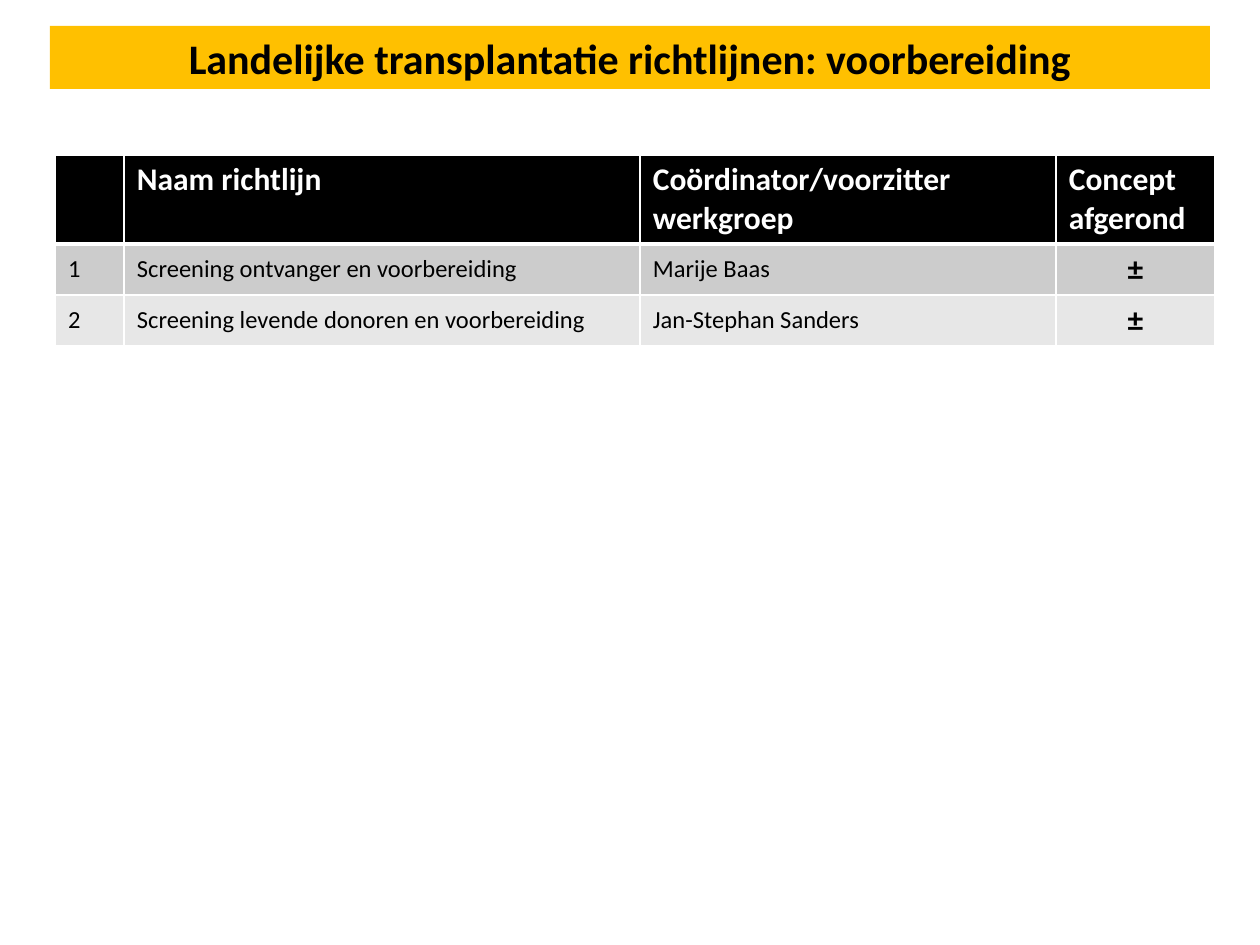
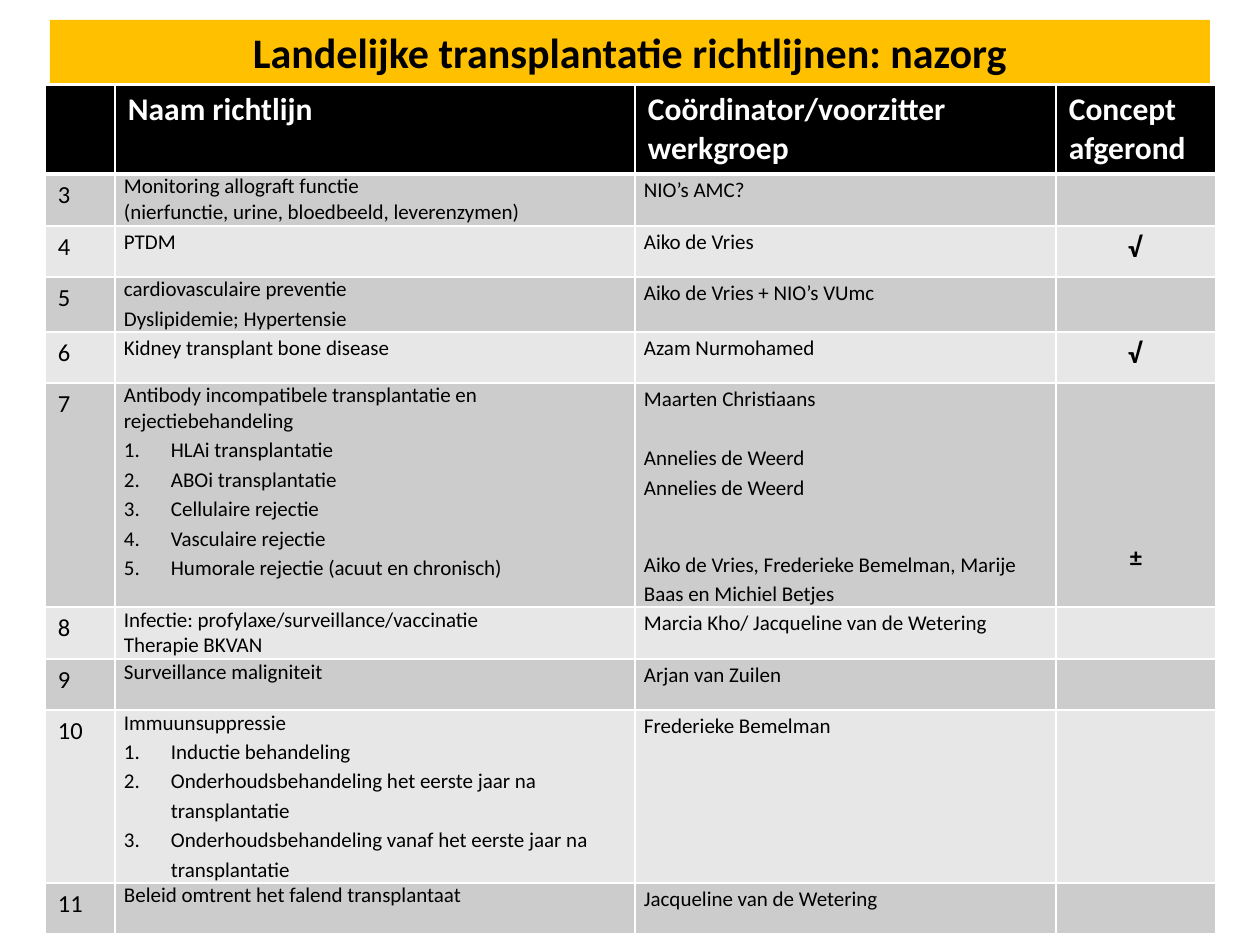
"""Builds two slides that list the national transplant guidelines."""
from dataclasses import dataclass

from lxml import etree
from pptx import Presentation
from pptx.dml.color import RGBColor
from pptx.enum.shapes import MSO_SHAPE
from pptx.enum.text import MSO_ANCHOR, PP_ALIGN
from pptx.oxml.ns import qn
from pptx.util import Emu, Pt

RECTANGLE = MSO_SHAPE.RECTANGLE
TOP, MIDDLE = MSO_ANCHOR.TOP, MSO_ANCHOR.MIDDLE
LEFT, CENTER = PP_ALIGN.LEFT, PP_ALIGN.CENTER
EMU_PER_PX = 914400 / 126
HEADINGS = ("", "Naam richtlijn", "Coördinator/voorzitter werkgroep", "Concept afgerond")


@dataclass(frozen=True)
class Theme:
    """Colours, font and type sizes shared by the slides."""
    font: str = "Calibri"
    band: str = "FFC000"
    ink: str = "000000"
    paper: str = "FFFFFF"
    stripes: tuple = ("CCCCCC", "E7E7E7")
    title: int = 24
    heading: int = 18
    check: int = 16
    body: int = 14
    detail: int = 12
    rule: int = 1
    header_rule: int = 3


THEME = Theme()


@dataclass(frozen=True)
class Line:
    """One paragraph of a table cell."""
    text: str
    size: int = THEME.detail
    bold: bool = False
    align: int = LEFT
    spacing: float = 1.15
    before: int = 0
    indent: int = 0
    numbered: bool = False


@dataclass(frozen=True)
class Entry:
    """The paragraphs of a table cell with their placement."""
    lines: tuple = ()
    anchor: int = TOP
    side: int = 13
    top: int = 6
    bottom: int = 6


def px(length):
    """Turn px into EMU."""
    return Emu(round(length * EMU_PER_PX))


def label(text, size=THEME.body, bold=False, align=LEFT, anchor=TOP, top=6):
    """Make a single-line entry with normal margins."""
    return Entry((Line(text, size, bold, align, 1.0),), anchor, top=top)


def detail(*lines):
    """Make an entry with tight margins; plain strings become 12 pt lines."""
    return Entry(tuple(Line(line) if isinstance(line, str) else line for line in lines),
                 side=9, top=0, bottom=0)


def dense(text):
    """Make a line without extra leading."""
    return Line(text, spacing=1.0)


def steps(*texts):
    """Make the numbered lines of a guideline."""
    return tuple(Line(text, indent=47, numbered=True) for text in texts)


def style_run(run, size, bold, color):
    """Set the font of a run."""
    run.font.name = THEME.font
    run.font.size = Pt(size)
    run.font.bold = bold
    run.font.color.rgb = RGBColor.from_string(color)


def write_line(paragraph, line, color):
    """Write and format one paragraph."""
    paragraph.text = line.text
    paragraph.alignment = line.align
    paragraph.line_spacing = line.spacing
    paragraph.space_before = Pt(line.before)
    for run in paragraph.runs:
        style_run(run, line.size, line.bold, color)
    properties = paragraph._p.get_or_add_pPr()
    if line.indent:
        properties.set("marL", str(px(line.indent)))
    if line.numbered:
        properties.set("indent", str(-px(line.indent)))
        etree.SubElement(properties, qn("a:buAutoNum"), type="arabicPeriod")


def draw_borders(cell, top, bottom):
    """Draw the four borders of a cell, with widths in points."""
    properties = cell._tc.get_or_add_tcPr()
    widths = {"L": THEME.rule, "R": THEME.rule, "T": top, "B": bottom}
    for side, width in widths.items():
        border = etree.SubElement(properties, qn(f"a:ln{side}"), w=str(Pt(width)))
        fill = etree.SubElement(border, qn("a:solidFill"))
        etree.SubElement(fill, qn("a:srgbClr"), val=THEME.paper)


def fill_cell(cell, entry, fill, color):
    """Fill a cell and write its entry."""
    cell.fill.solid()
    cell.fill.fore_color.rgb = RGBColor.from_string(fill)
    cell.vertical_anchor = entry.anchor
    cell.margin_left = cell.margin_right = px(entry.side)
    cell.margin_top, cell.margin_bottom = px(entry.top), px(entry.bottom)
    frame = cell.text_frame
    for index, line in enumerate(entry.lines):
        paragraph = frame.add_paragraph() if index else frame.paragraphs[0]
        write_line(paragraph, line, color)


def title_band(slide, box, title):
    """Draw the coloured title band."""
    band = slide.shapes.add_shape(RECTANGLE, *map(px, box))
    band.shadow.inherit = False
    band.fill.solid()
    band.fill.fore_color.rgb = RGBColor.from_string(THEME.band)
    band.line.fill.background()
    frame = band.text_frame
    frame.word_wrap = True
    frame.vertical_anchor = MIDDLE
    frame.text = title
    frame.paragraphs[0].alignment = CENTER
    style_run(frame.paragraphs[0].runs[0], THEME.title, True, THEME.ink)


def guideline_table(slide, origin, widths, heights, guidelines):
    """Draw the table of guidelines below its header row."""
    header = [label(text, THEME.heading, True) if text else Entry() for text in HEADINGS]
    rows = [header, *guidelines]
    frame = slide.shapes.add_table(len(rows), len(widths), *map(px, origin),
                                   px(sum(widths)), px(sum(heights)))
    table = frame.table
    table.first_row = table.horz_banding = False
    for column, width in zip(table.columns, widths):
        column.width = px(width)
    for number, (row, height, entries) in enumerate(zip(table.rows, heights, rows)):
        row.height = px(height)
        fill = THEME.stripes[(number - 1) % 2] if number else THEME.ink
        color = THEME.ink if number else THEME.paper
        top = THEME.header_rule if number == 1 else THEME.rule
        bottom = THEME.rule if number else THEME.header_rule
        for cell, entry in zip(row.cells, entries):
            draw_borders(cell, top, bottom)
            fill_cell(cell, entry, fill, color)


def guideline_slide(deck, title, band_top, origin, widths, heights, guidelines):
    """Add a slide with a guideline table and a title band."""
    slide = deck.slides.add_slide(deck.slide_layouts[6])
    guideline_table(slide, origin, widths, heights, guidelines)
    title_band(slide, (50, band_top, 1160, 63), title)


def preparation_guidelines():
    """Return the rows on preparation."""
    guidelines = (("Screening ontvanger en voorbereiding", "Marije Baas"),
                  ("Screening levende donoren en voorbereiding", "Jan-Stephan Sanders"))
    return [[*(label(text, anchor=MIDDLE) for text in (str(number), name, chair)),
             label("±", THEME.heading, True, CENTER, MIDDLE)]
            for number, (name, chair) in enumerate(guidelines, 1)]


def aftercare_guidelines():
    """Return the rows on aftercare."""
    pending = Entry()
    done = detail(Line("√", THEME.check, True, indent=63))
    partly = label("±", bold=True, align=CENTER, top=160)
    guidelines = (
        (detail(dense("Monitoring allograft functie"),
                dense("(nierfunctie, urine, bloedbeeld, leverenzymen)")),
         detail("NIO’s AMC?"), pending),
        (detail("PTDM"), detail("Aiko de Vries"), done),
        (detail(dense("cardiovasculaire preventie"), "Dyslipidemie; Hypertensie"),
         detail("Aiko de Vries + NIO’s VUmc"), pending),
        (detail("Kidney transplant bone disease"), detail("Azam Nurmohamed"), done),
        (detail(dense("Antibody incompatibele transplantatie en rejectiebehandeling"),
                *steps("HLAi transplantatie", "ABOi transplantatie",
                       "Cellulaire rejectie", "Vasculaire rejectie",
                       "Humorale rejectie (acuut en chronisch)")),
         detail("Maarten Christiaans", Line("Annelies de Weerd", before=17),
                "Annelies de Weerd",
                Line("Aiko de Vries, Frederieke Bemelman, Marije Baas en Michiel Betjes",
                     before=27)),
         partly),
        (detail(dense("Infectie: profylaxe/surveillance/vaccinatie"),
                dense("Therapie BKVAN")),
         detail("Marcia Kho/ Jacqueline van de Wetering"), pending),
        (detail(dense("Surveillance maligniteit")), detail("Arjan van Zuilen"), pending),
        (detail(dense("Immuunsuppressie"),
                *steps("Inductie behandeling",
                       "Onderhoudsbehandeling het eerste jaar na transplantatie",
                       "Onderhoudsbehandeling vanaf het eerste jaar na transplantatie")),
         detail("Frederieke Bemelman"), pending),
        (detail(dense("Beleid omtrent het falend transplantaat")),
         detail("Jacqueline van de Wetering"), pending),
    )
    return [[label(str(number)), *entries] for number, entries in enumerate(guidelines, 3)]


def main():
    """Build and save the deck."""
    deck = Presentation()
    deck.slide_width, deck.slide_height = px(1260), px(945)
    guideline_slide(deck, "Landelijke transplantatie richtlijnen: voorbereiding", 26,
                    (55, 155), (69, 516, 416, 159), (89, 51, 51),
                    preparation_guidelines())
    guideline_slide(deck, "Landelijke transplantatie richtlijnen: nazorg", 20,
                    (45, 85), (70, 520, 421, 160),
                    (89, 52, 51, 55, 51, 223, 52, 51, 172, 51),
                    aftercare_guidelines())
    deck.save("out.pptx")


if __name__ == "__main__":
    main()
